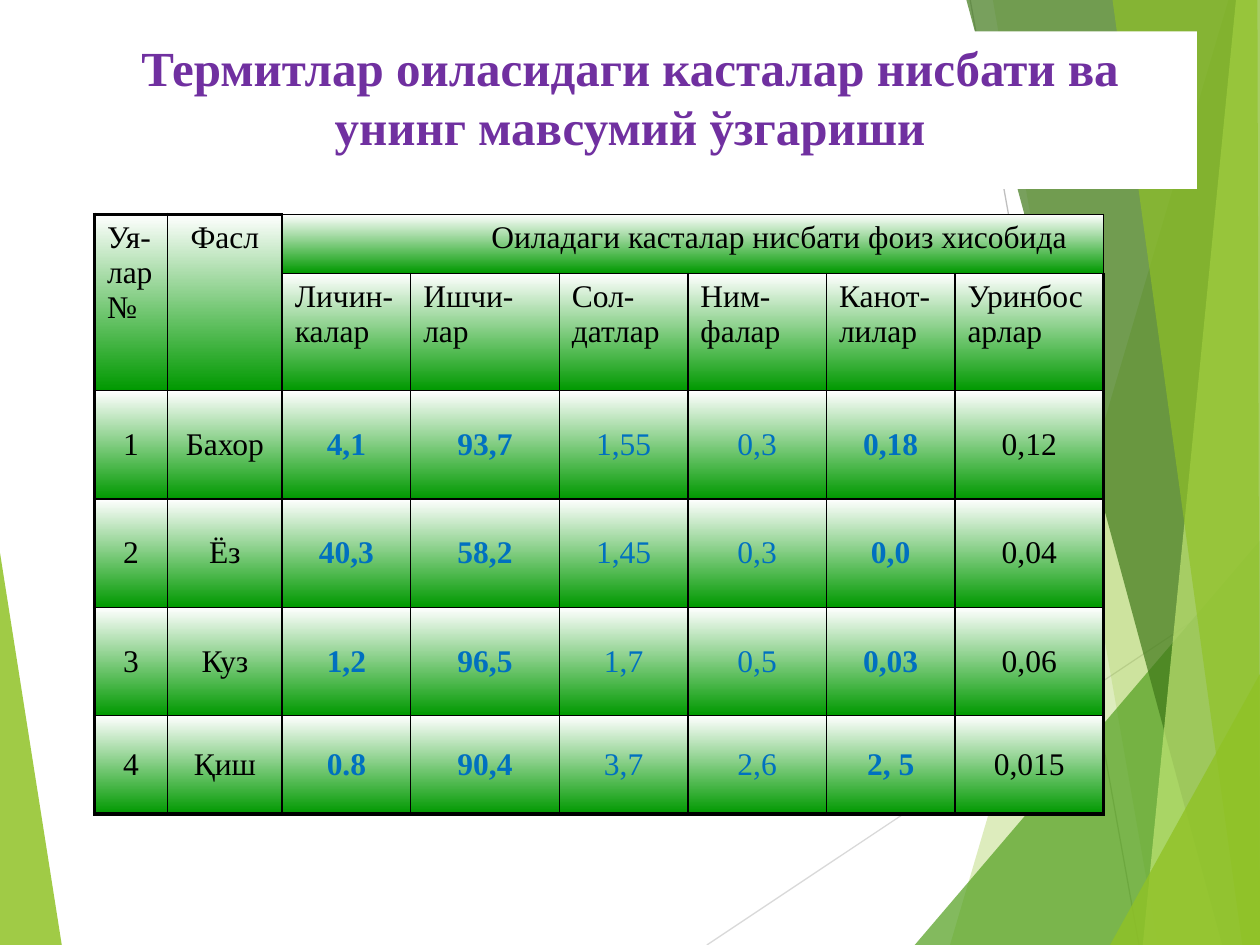
from dataclasses import dataclass

import lxml.etree
import pptx
import pptx.dml.color
import pptx.enum.shapes
import pptx.enum.text
import pptx.oxml
import pptx.oxml.ns
import pptx.util

qn = pptx.oxml.ns.qn
Align = pptx.enum.text.PP_ALIGN
Anchor = pptx.enum.text.MSO_ANCHOR


@dataclass(frozen=True)
class Theme:
    font: str = "Times New Roman"
    head: int = 28
    body: int = 18
    thin: float = 1
    thick: float = 2.25
    hair: float = 0.75
    white: str = "FFFFFF"
    black: str = "000000"
    purple: str = "7030A0"
    blue: str = "0070C0"
    green: str = "009900"
    lime: str = "90C226"
    leaf: str = "54A021"
    moss: str = "3F7819"
    pale: str = "C0E474"
    gray: str = "BFBFBF"
    mist: str = "D9D9D9"


@dataclass(frozen=True)
class Facet:
    points: tuple
    color: str
    alpha: int


@dataclass(frozen=True)
class Ray:
    start: tuple
    end: tuple
    color: str


THEME = Theme()
WIDE = pptx.util.Inches(10)
HIGH = pptx.util.Inches(7.5)

RAYS = (
    Ray((56.1, 100), (100, 61), THEME.mist),
    Ray((77, 0), (90.4, 100), THEME.gray),
)
FACETS = (
    Facet(((0, 58.5), (4.9, 100), (0, 100)), THEME.lime, 85),
    Facet(((97.5, 0), (75.4, 100), (100, 100), (100, 0)), THEME.lime, 30),
    Facet(((78.8, 0), (91.9, 100), (100, 100), (100, 0)), THEME.lime, 20),
    Facet(((72.6, 100), (100, 57.2), (100, 100)), THEME.leaf, 72),
    Facet(((76.7, 0), (97, 100), (100, 100), (100, 0)), THEME.moss, 70),
    Facet(((98.1, 0), (90.7, 100), (100, 100), (100, 0)), THEME.pale, 70),
    Facet(((88.3, 0), (98.6, 100), (100, 100), (99.8, 0)), THEME.lime, 65),
    Facet(((88.1, 100), (100, 71.3), (100, 100)), THEME.lime, 80),
)

COLS = (0.58, 0.91, 1.02, 1.18, 1.02, 1.1, 1.02, 1.18)
ROWS = (0.47, 0.83, 0.86, 0.86, 0.86, 0.78)
HEAD = 2
BOLD = (2, 3, 6)
BLUE = range(2, 7)
TITLE = "Термитлар оиласидаги касталар нисбати ва унинг мавсумий ўзгариши"
CELLS = (
    ("Уя-лар №", "Фасл", "Оиладаги касталар нисбати фоиз хисобида", "", "", "", "", ""),
    ("", "", "Личин-калар", "Ишчи-лар", "Сол-датлар", "Ним-фалар", "Канот-лилар", "Уринбосарлар"),
    ("1", "Бахор", "4,1", "93,7", "1,55", "0,3", "0,18", "0,12"),
    ("2", "Ёз", "40,3", "58,2", "1,45", "0,3", "0,0", "0,04"),
    ("3", "Куз", "1,2", "96,5", "1,7", "0,5", "0,03", "0,06"),
    ("4", "Қиш", "0.8", "90,4", "3,7", "2,6", "2, 5", "0,015"),
)


def rgb(code: str) -> pptx.dml.color.RGBColor:
    return pptx.dml.color.RGBColor.from_string(code)


def place(point: tuple) -> tuple:
    return int(WIDE * point[0] / 100), int(HIGH * point[1] / 100)


def style(para, size: int, color: str, bold: bool, align) -> None:
    para.alignment = align
    for run in para.runs:
        font = run.font
        font.name, font.size, font.bold = THEME.font, pptx.util.Pt(size), bold
        font.color.rgb = rgb(color)


def draw_ray(slide, ray: Ray) -> None:
    line = slide.shapes.add_connector(
        pptx.enum.shapes.MSO_CONNECTOR.STRAIGHT, *place(ray.start), *place(ray.end))
    line.line.color.rgb = rgb(ray.color)
    line.line.width = pptx.util.Pt(THEME.hair)
    lxml.etree.SubElement(line.element.spPr, qn("a:effectLst"))


def draw_facet(slide, facet: Facet) -> None:
    first, *rest = map(place, facet.points)
    pen = slide.shapes.build_freeform(*first)
    pen.add_line_segments(rest, close=True)
    shape = pen.convert_to_shape()
    shape.shadow.inherit = False
    shape.line.fill.background()
    shape.fill.solid()
    shape.fill.fore_color.rgb = rgb(facet.color)
    paint = shape.element.spPr.find(qn("a:solidFill")).find(qn("a:srgbClr"))
    lxml.etree.SubElement(paint, qn("a:alpha"), val=str(facet.alpha * 1000))


def draw_title(slide) -> None:
    title = slide.shapes.title
    slide.shapes.element.append(title.element)
    title.left, title.top = place((5, 3.33))
    title.width, title.height = place((90, 16.67))
    title.fill.solid()
    title.fill.fore_color.rgb = rgb(THEME.white)
    frame = title.text_frame
    frame.text = TITLE
    frame.word_wrap = True
    frame.auto_size = pptx.enum.text.MSO_AUTO_SIZE.NONE
    frame.vertical_anchor = Anchor.TOP
    style(frame.paragraphs[0], THEME.head, THEME.purple, True, Align.CENTER)


def edge(cell, side: str, width: float) -> None:
    line = lxml.etree.SubElement(
        cell._tc.get_or_add_tcPr(), qn(f"a:ln{side}"), w=str(pptx.util.Pt(width)))
    fill = lxml.etree.SubElement(line, qn("a:solidFill"))
    lxml.etree.SubElement(fill, qn("a:srgbClr"), val=THEME.black)


def draw_cell(cell, row: int, col: int) -> None:
    outer = {
        "L": col == 0,
        "R": col == len(COLS) - 1,
        "T": row == 0 and col < 2,
        "B": row == len(ROWS) - 1,
    }
    for side, thick in outer.items():
        edge(cell, side, THEME.thick if thick else THEME.thin)
    cell.fill.gradient()
    cell.fill.gradient_angle = 270
    for stop, code, spot in zip(cell.fill.gradient_stops, (THEME.white, THEME.green), (0, 1)):
        stop.color.rgb, stop.position = rgb(code), spot
    if not CELLS[row][col]:
        return
    data = row >= HEAD
    align = Align.CENTER if data or (row, col) == (0, 1) else Align.LEFT
    if cell.is_merge_origin and cell.span_width > 1:
        align = Align.RIGHT
        cell.margin_right = pptx.util.Inches(0.29)
    cell.vertical_anchor = Anchor.MIDDLE if data else Anchor.TOP
    cell.text_frame.text = CELLS[row][col]
    style(cell.text_frame.paragraphs[0], THEME.body,
          THEME.blue if data and col in BLUE else THEME.black,
          data and col in BOLD, align)


def draw_table(slide) -> None:
    size = pptx.util.Inches(sum(COLS)), pptx.util.Inches(sum(ROWS))
    table = slide.shapes.add_table(len(ROWS), len(COLS), *place((7.5, 22.67)), *size).table
    table.first_row = table.horz_banding = False
    for col, width in zip(table.columns, COLS):
        col.width = pptx.util.Inches(width)
    for row, height in zip(table.rows, ROWS):
        row.height = pptx.util.Inches(height)
    for col in range(2):
        table.cell(0, col).merge(table.cell(1, col))
    table.cell(0, 2).merge(table.cell(0, len(COLS) - 1))
    for row in range(len(ROWS)):
        for col in range(len(COLS)):
            draw_cell(table.cell(row, col), row, col)


def main() -> None:
    deck = pptx.Presentation()
    deck.slide_width, deck.slide_height = WIDE, HIGH
    slide = deck.slides.add_slide(deck.slide_layouts[5])
    draw_facet(slide, FACETS[0])
    for ray in RAYS:
        draw_ray(slide, ray)
    for facet in FACETS[1:]:
        draw_facet(slide, facet)
    draw_title(slide)
    draw_table(slide)
    deck.save("out.pptx")


if __name__ == "__main__":
    main()
